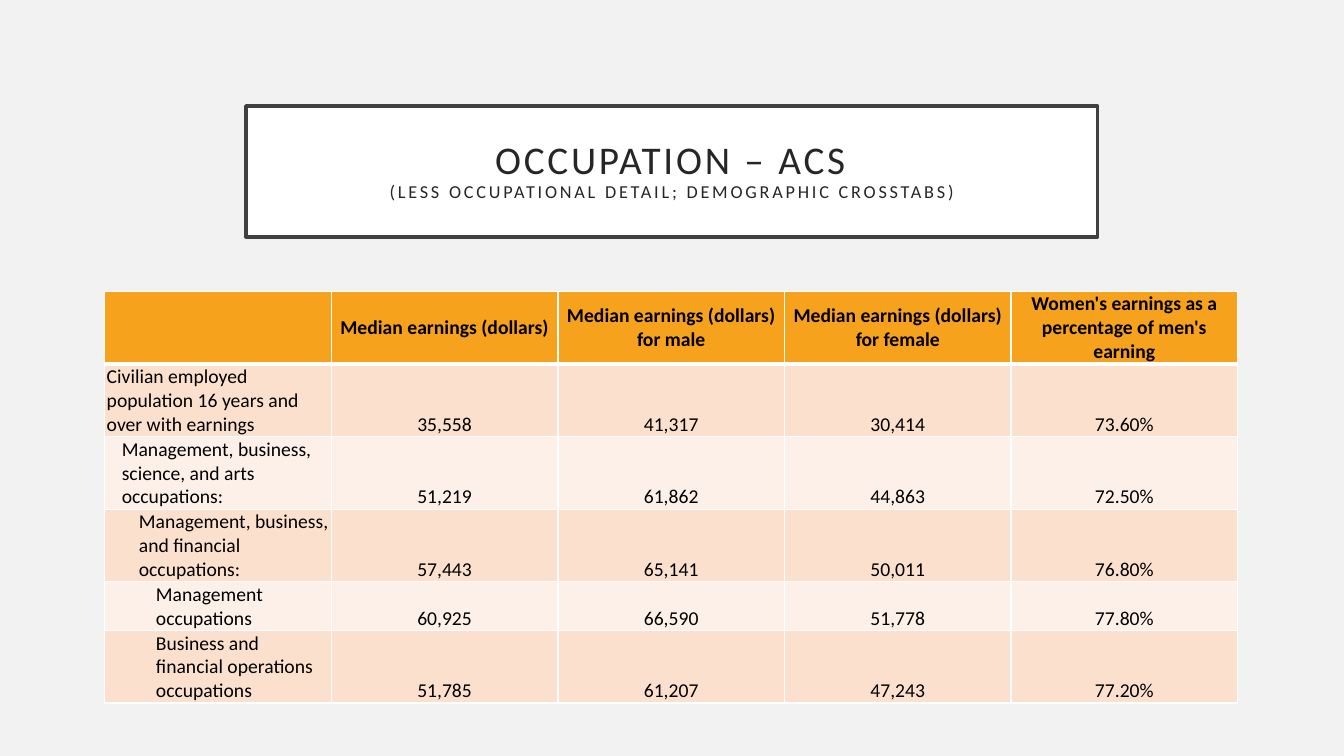
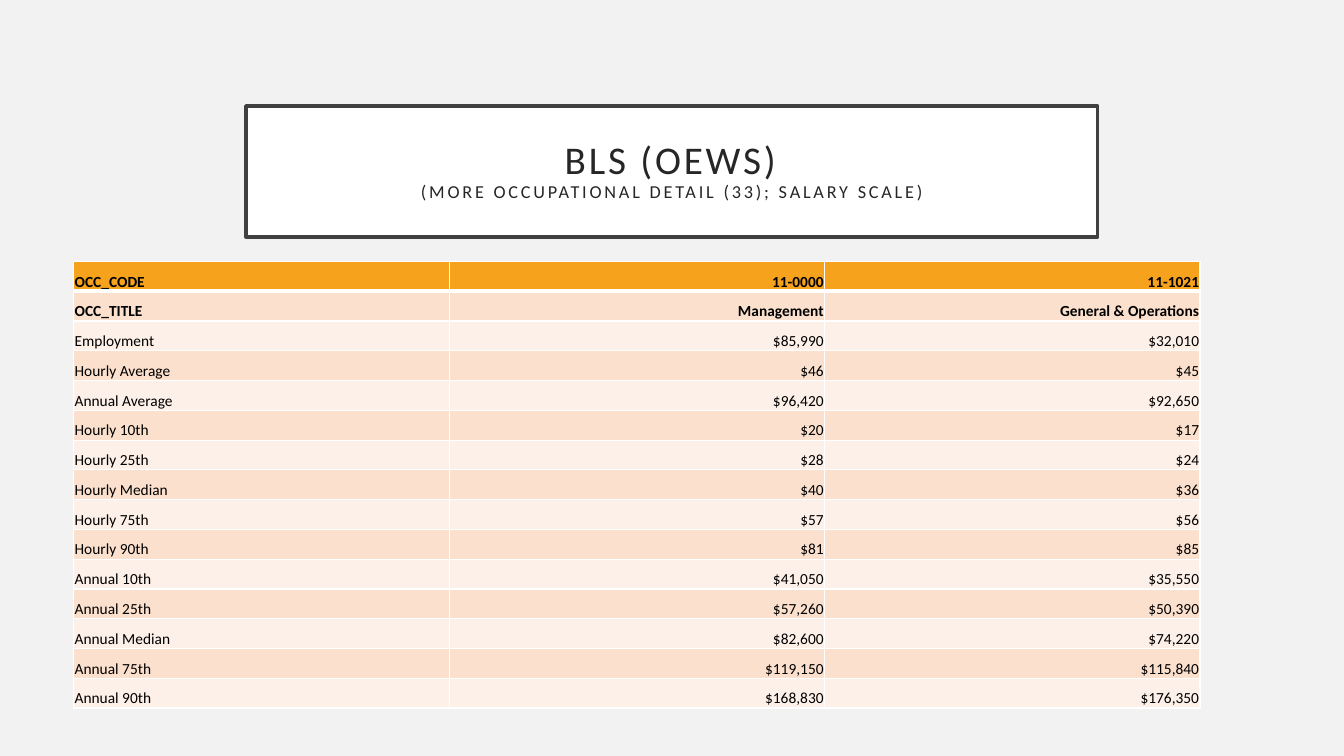
from lxml import etree
from pptx import Presentation
from pptx.dml.color import RGBColor
from pptx.enum.shapes import MSO_SHAPE
from pptx.enum.text import MSO_ANCHOR, PP_ALIGN
from pptx.oxml.ns import qn
from pptx.util import Cm, Pt

LEFT, MID, RIGHT = PP_ALIGN.LEFT, PP_ALIGN.CENTER, PP_ALIGN.RIGHT
CENTRE, BASE = MSO_ANCHOR.MIDDLE, MSO_ANCHOR.BOTTOM
RECT = MSO_SHAPE.RECTANGLE

# Shared style
FONT = "Calibri"
PAGE, WHITE, FRAME = "F2F2F2", "FFFFFF", "404040"
INK, BLACK = "262626", "000000"
HEAD, BANDS = "F6A21D", ("FBE0CD", "FDF0E8")


def paint(fill, color):
    fill.solid()
    fill.fore_color.rgb = RGBColor.from_string(color)


def add_run(para, text, size, color, bold=False):
    run = para.add_run()
    run.text = text
    run.font.name, run.font.size, run.font.bold = FONT, Pt(size), bold
    paint(run.font.fill, color)
    return run


# Slide content
earnings = [
    ("", "Median earnings (dollars)", "Median earnings (dollars) for male",
     "Median earnings (dollars) for female",
     "Women's earnings as a percentage of men's earning"),
    ("Civilian employed population 16 years and over with earnings",
     "35,558", "41,317", "30,414", "73.60%"),
    ("Management, business, science, and arts occupations:",
     "51,219", "61,862", "44,863", "72.50%"),
    ("Management, business, and financial occupations:",
     "57,443", "65,141", "50,011", "76.80%"),
    ("Management occupations", "60,925", "66,590", "51,778", "77.80%"),
    ("Business and financial operations occupations",
     "51,785", "61,207", "47,243", "77.20%"),
]
wages = [
    ("OCC_CODE", "11-0000", "11-1021"),
    ("OCC_TITLE", "Management", "General & Operations"),
    ("Employment", "$85,990", "$32,010"),
    ("Hourly Average", "$46", "$45"),
    ("Annual Average", "$96,420", "$92,650"),
    ("Hourly 10th", "$20", "$17"),
    ("Hourly 25th", "$28", "$24"),
    ("Hourly Median", "$40", "$36"),
    ("Hourly 75th", "$57", "$56"),
    ("Hourly 90th", "$81", "$85"),
    ("Annual 10th", "$41,050", "$35,550"),
    ("Annual 25th", "$57,260", "$50,390"),
    ("Annual Median", "$82,600", "$74,220"),
    ("Annual 75th", "$119,150", "$115,840"),
    ("Annual 90th", "$168,830", "$176,350"),
]
slides = [
    dict(title="OCCUPATION – ACS",
         note="(LESS OCCUPATIONAL DETAIL; DEMOGRAPHIC CROSSTABS)",
         rows=earnings, left=2.64, top=7.34, width=5.71,
         heights=[1.83] * 4 + [1.22, 1.83], indents=[0, 0, 1, 2, 3, 3],
         size=14, pad=0.05, align=MID, anchor=CENTRE, bold=1),
    dict(title="BLS (OEWS)",
         note="(MORE OCCUPATIONAL DETAIL (33); SALARY SCALE)",
         rows=wages, left=1.86, top=6.59, width=9.46,
         heights=[0.75] * 15, indents=[0] * 15,
         size=11, pad=0.02, align=RIGHT, anchor=BASE, bold=2),
]

deck = Presentation()
deck.slide_width, deck.slide_height = Cm(33.87), Cm(19.05)

for data in slides:
    slide = deck.slides.add_slide(deck.slide_layouts[6])
    paint(slide.background.fill, PAGE)

    # Framed title
    box = slide.shapes.add_shape(RECT, Cm(6.2), Cm(2.67), Cm(21.46), Cm(3.3))
    box.shadow.inherit = False
    paint(box.fill, WHITE)
    paint(box.line.fill, FRAME)
    box.line.width = Pt(2.5)
    frame = box.text_frame
    frame.word_wrap, frame.vertical_anchor = True, CENTRE
    frame.margin_left = frame.margin_right = Cm(0.5)
    frame.margin_top = frame.margin_bottom = Cm(0.5)
    para = frame.paragraphs[0]
    para.alignment, para.line_spacing = MID, 0.9
    lines = [add_run(para, data["title"], 28, INK)]
    para.add_line_break()
    lines.append(add_run(para, data["note"], 13, INK))
    for run in lines:
        run.font._element.set("spc", "200")

    # Table grid
    rows, heights = data["rows"], data["heights"]
    count = len(rows[0])
    table = slide.shapes.add_table(
        len(rows), count, Cm(data["left"]), Cm(data["top"]),
        Cm(data["width"] * count), Cm(sum(heights))).table
    for col in table.columns:
        col.width = Cm(data["width"])

    # Table cells
    for r, row in enumerate(rows):
        table.rows[r].height = Cm(heights[r])
        for c, text in enumerate(row):
            cell = table.cell(r, c)
            paint(cell.fill, BANDS[(r - 1) % 2] if r else HEAD)
            cell.vertical_anchor = BASE if r else data["anchor"]
            cell.margin_left = cell.margin_right = Cm(data["pad"])
            cell.margin_top, cell.margin_bottom = Cm(0.02), 0
            if c == 0 and data["indents"][r]:
                cell.margin_left = Cm(0.43 * data["indents"][r])
            para = cell.text_frame.paragraphs[0]
            para.alignment = data["align"] if c else LEFT
            if text:
                add_run(para, text, data["size"], BLACK, r < data["bold"])

            # White borders, thicker below the header
            props = cell._tc.get_or_add_tcPr()
            for i, side in enumerate("LRTB"):
                thick = (r, side) in ((0, "B"), (1, "T"))
                line = etree.Element(qn("a:ln" + side),
                                     w=str(Pt(3 if thick else 1)))
                solid = etree.SubElement(line, qn("a:solidFill"))
                etree.SubElement(solid, qn("a:srgbClr"), val=WHITE)
                props.insert(i, line)

deck.save("out.pptx")
